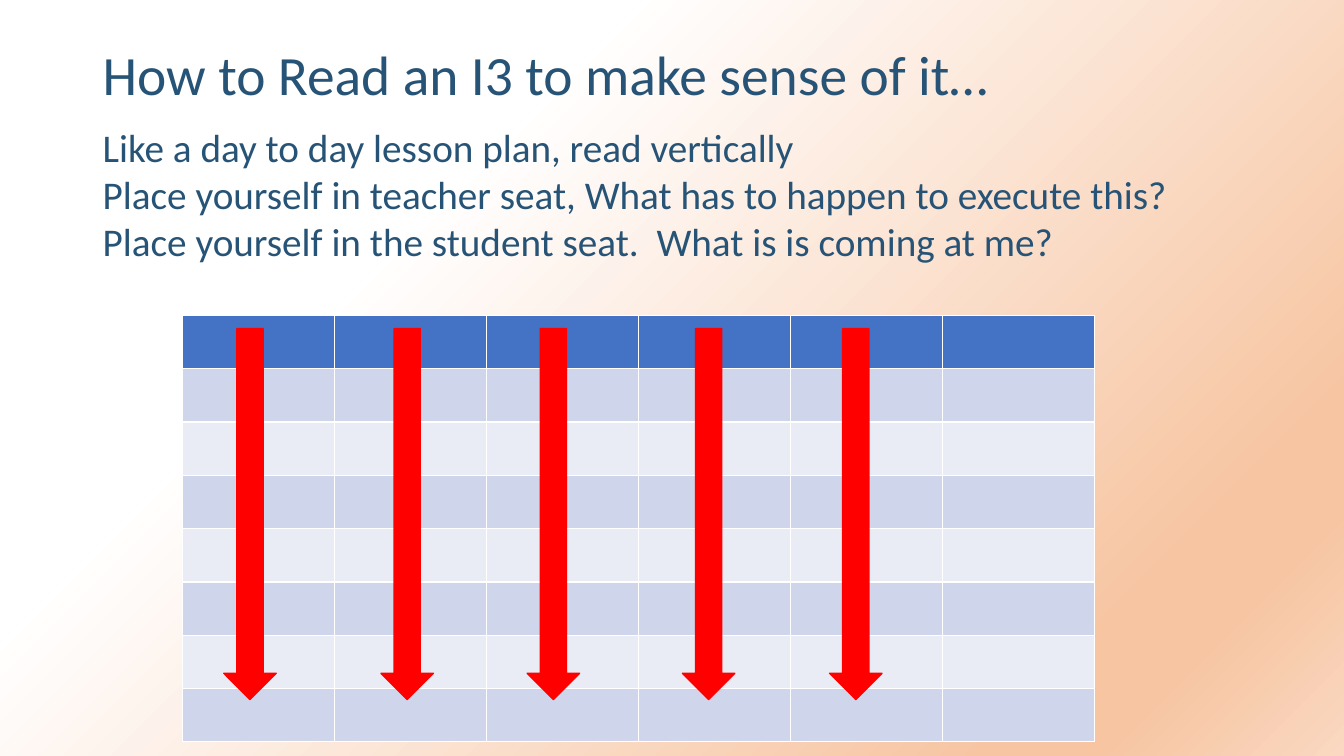
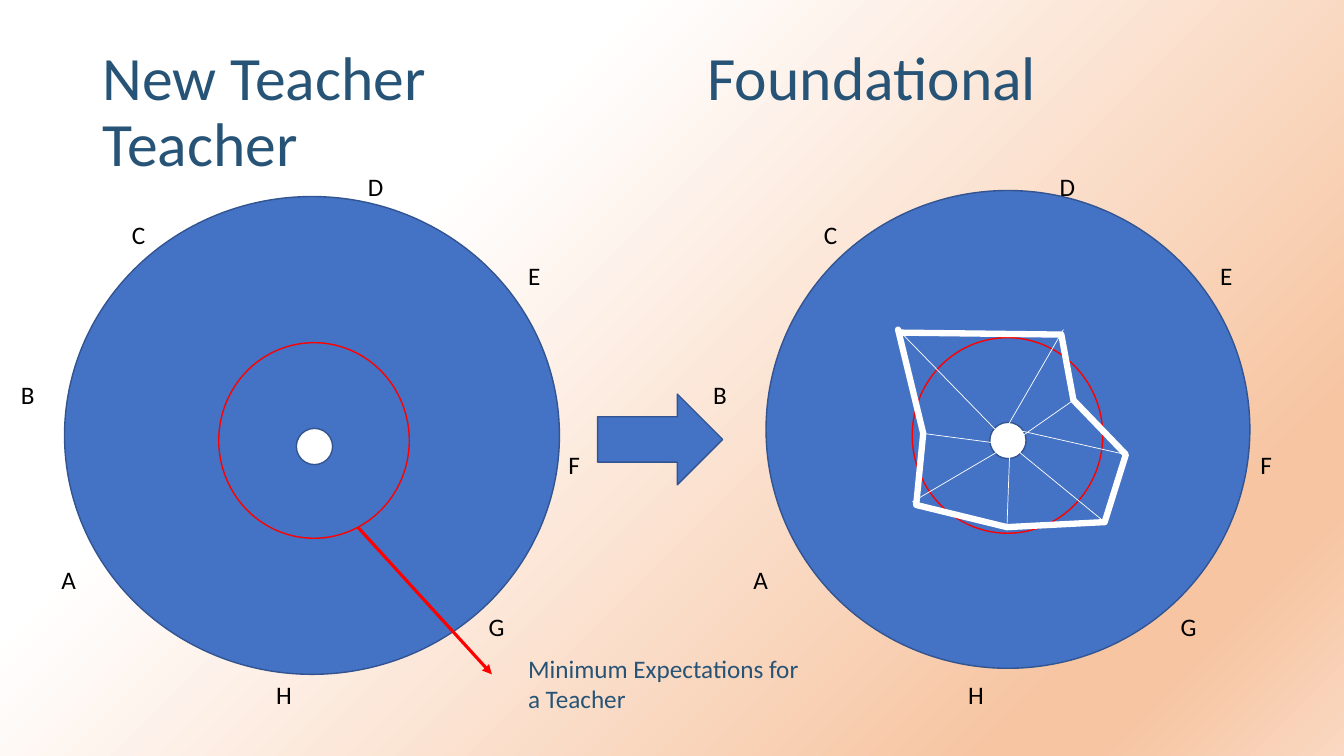
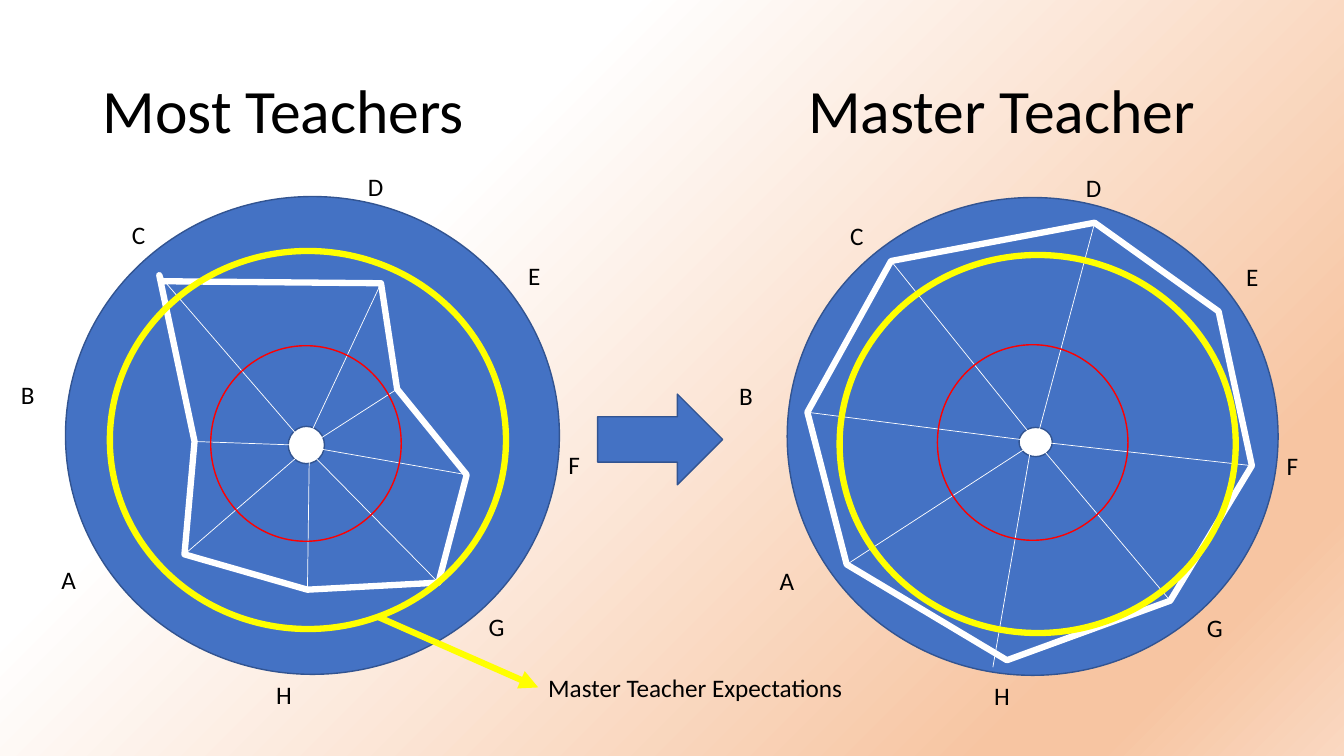
from lxml.etree import SubElement
from pptx import Presentation
from pptx.dml.color import RGBColor
from pptx.enum.shapes import MSO_CONNECTOR, MSO_SHAPE
from pptx.enum.text import MSO_ANCHOR, MSO_AUTO_SIZE
from pptx.oxml.ns import qn
from pptx.util import Pt

EMU_PER_PX = 9144  # 100 px to the inch

NAVY = RGBColor(0x27, 0x54, 0x76)
BLACK = RGBColor(0x00, 0x00, 0x00)
WHITE = RGBColor(0xFF, 0xFF, 0xFF)
RED = RGBColor(0xFF, 0x00, 0x00)
YELLOW = RGBColor(0xFF, 0xFF, 0x00)
BLUE = RGBColor(0x44, 0x72, 0xC4)
BLUE_EDGE = RGBColor(0x32, 0x54, 0x91)
BAND_DARK = RGBColor(0xCF, 0xD5, 0xEA)
BAND_LIGHT = RGBColor(0xE9, 0xEB, 0xF5)
PEACH = RGBColor(0xF7, 0xC5, 0xA2)
PALE_PEACH = RGBColor(0xFA, 0xD8, 0xC1)

BACKDROP = [(30, WHITE), (83, PEACH), (88, PEACH), (100, PALE_PEACH)]
TITLE_FRAME = {"vertical_anchor": MSO_ANCHOR.MIDDLE, "word_wrap": True}
TEXT_FRAME = {"auto_size": MSO_AUTO_SIZE.SHAPE_TO_FIT_TEXT, "word_wrap": True}

LABEL_SPOTS = {"A": (51, 555), "B": (11, 371), "C": (121, 213), "D": (355, 165),
               "E": (514, 253), "F": (554, 441), "G": (475, 602), "H": (264, 669)}


def px(*lengths):
    return [round(length * EMU_PER_PX) for length in lengths]


def set_all(target, values):
    for name, value in values.items():
        setattr(target, name, value)


class Deck:
    def __init__(self):
        self.presentation = Presentation()
        width, height = px(1333.33, 750)
        set_all(self.presentation, {"slide_width": width, "slide_height": height})
        self.slide = None

    @property
    def shapes(self):
        return self.slide.shapes

    def new_slide(self):
        self.slide = self.presentation.slides.add_slide(self.presentation.slide_layouts[6])
        fill = self.slide.background.fill
        fill.gradient()
        fill.gradient_angle = 315
        stops = self.slide.element.find(".//" + qn("a:gsLst"))
        for stop in list(stops):
            stops.remove(stop)
        for percent, color in BACKDROP:
            stop = SubElement(stops, qn("a:gs"), pos=str(percent * 1000))
            SubElement(stop, qn("a:srgbClr"), val=str(color))

    def text(self, box, lines, size=18, color=BLACK, frame_format=TEXT_FRAME, **paragraph_format):
        text_box = self.shapes.add_textbox(*px(*box))
        frame = text_box.text_frame
        set_all(frame, frame_format)
        frame.text = lines
        for paragraph in frame.paragraphs:
            set_all(paragraph, paragraph_format)
            for run in paragraph.runs:
                set_all(run.font, {"name": "Calibri", "size": Pt(size)})
                run.font.color.rgb = color
        return text_box

    def title(self, words, size=44, color=NAVY, height=145, tab=None):
        """Write the slide title; tab is where its second part starts."""
        title = self.text((92, 40, 1150, height), words, size, color, TITLE_FRAME, line_spacing=0.9)
        if tab:
            properties = title.text_frame.paragraphs[0]._p.get_or_add_pPr()
            stops = SubElement(properties, qn("a:tabLst"))
            SubElement(stops, qn("a:tab"), pos=str(px(tab)[0]), algn="l")

    def paint(self, shape, fill, line, weight):
        shape.shadow.inherit = False
        if fill is None:
            shape.fill.background()
        else:
            shape.fill.solid()
            shape.fill.fore_color.rgb = fill
        shape.line.color.rgb = line
        shape.line.width = Pt(weight)

    def shape(self, kind, box, fill=BLUE, line=BLUE_EDGE, weight=1):
        self.paint(self.shapes.add_shape(kind, *px(*box)), fill, line, weight)

    def disc(self, box):
        self.shape(MSO_SHAPE.OVAL, box)

    def hub(self, box):
        self.shape(MSO_SHAPE.OVAL, box, WHITE)

    def ring(self, box, color, weight=1):
        self.shape(MSO_SHAPE.OVAL, box, None, color, weight)

    def next_arrow(self):
        self.shape(MSO_SHAPE.RIGHT_ARROW, (593, 391, 124, 90))

    def labels(self, right=0, down=0):
        for letter, (left, top) in LABEL_SPOTS.items():
            self.text((left + right, top + down, 39, 40), letter)

    def web(self, corners, fill=None):
        builder = self.shapes.build_freeform(*corners[0], scale=EMU_PER_PX)
        builder.add_line_segments(corners[1:], close=True)
        self.paint(builder.convert_to_shape(), fill, WHITE, 4.5)

    def line(self, ends, color=WHITE, weight=0.5, arrow=False):
        line = self.shapes.add_connector(MSO_CONNECTOR.STRAIGHT, *px(*ends))
        line.line.color.rgb = color
        line.line.width = Pt(weight)
        if arrow:
            SubElement(line.line._get_or_add_ln(), qn("a:tailEnd"), type="triangle")
        SubElement(line._element.spPr, qn("a:effectLst"))
        return line

    def spokes(self, *all_ends):
        for ends in all_ends:
            self.line(ends)

    def banded_table(self, box, rows, columns):
        table = self.shapes.add_table(rows, columns, *px(*box)).table
        for index, row in enumerate(table.rows):
            band = BAND_DARK if index % 2 else BAND_LIGHT
            for cell in row.cells:
                cell.fill.solid()
                cell.fill.fore_color.rgb = band if index else BLUE


def reading_slide(deck):
    deck.new_slide()
    deck.title("How to Read an I3 to make sense of it…", 39.6, height=73)
    deck.banded_table((181, 313, 905, 423), 8, 6)
    for left in (222, 378, 523, 677, 823):
        deck.shape(MSO_SHAPE.DOWN_ARROW, (left, 326, 52, 368), RED, RED)
    deck.text((92, 117, 1115, 151),
              "Like a day to day lesson plan, read vertically\n"
              "Place yourself in teacher seat, What has to happen to execute this?\n"
              "Place yourself in the student seat.  What is is coming at me?", 28, NAVY)


def new_teacher_slide(deck):
    deck.new_slide()
    deck.title("New Teacher\tFoundational Teacher", tab=600)
    deck.disc((64, 195, 491, 474))
    deck.labels()
    deck.disc((760, 189, 480, 474))
    deck.labels(right=686.5)
    deck.ring((905, 335, 189, 194), RED)
    deck.ring((217, 340, 189, 194), RED)
    deck.hub((294, 425, 36, 36))
    deck.hub((982, 419, 36, 36))
    deck.web([(891, 327), (916, 430), (909, 501), (999, 523), (1096, 518),
              (1117, 451), (1065, 397), (1053, 332), (892, 330)])
    deck.next_arrow()
    deck.spokes((1002, 441, 891, 327), (1055, 327, 989, 441), (1065, 397, 1002, 441),
                (1117, 451, 1002, 425), (1096, 518, 1002, 441), (999, 523, 1002, 441),
                (905, 498, 1002, 441), (916, 430, 999, 441))
    deck.line((355, 523, 488, 669), RED, 2.25, arrow=True)
    deck.text((514, 643, 293, 71), "Minimum Expectations for a Teacher", color=NAVY)


def master_teacher_slide(deck):
    deck.new_slide()
    deck.title("Most Teachers\tMaster Teacher", color=BLACK, tab=700)
    deck.disc((65, 195, 490, 474))
    deck.labels()
    deck.disc((781, 196, 487, 474))
    deck.labels(right=712.5, down=1)
    deck.web([(884, 259), (801, 409), (840, 560), (999, 655), (1161, 596),
              (1242, 462), (1209, 309), (1086, 221)], BLUE)
    deck.hub((1011, 424, 33, 29))
    deck.spokes((1086, 221, 1028, 438), (884, 259, 1028, 438), (801, 409, 1028, 438),
                (840, 560, 1028, 438), (985, 662, 1025, 431), (1161, 596, 1028, 438),
                (1242, 462, 1028, 438))
    deck.web([(158, 273), (193, 438), (183, 550), (305, 585), (435, 578),
              (463, 471), (394, 386), (378, 281), (160, 279)], BLUE)
    deck.hub((286, 423, 36, 37))
    deck.spokes((158, 273, 303, 441), (378, 281, 303, 441), (394, 386, 307, 442),
                (193, 438, 307, 442), (183, 550, 308, 442), (305, 585, 307, 442),
                (435, 578, 304, 445), (463, 471, 304, 443))
    deck.ring((209, 343, 189, 194), RED)
    deck.ring((930, 342, 189, 194), RED)
    deck.next_arrow()
    deck.ring((833, 253, 393, 375), YELLOW, 4.5)
    deck.ring((109, 249, 393, 375), YELLOW, 4.5)
    pointer = deck.line((375, 612, 534, 682), YELLOW, 4.5, arrow=True)
    caption = deck.text((534, 662, 331, 40), "Master Teacher Expectations")
    pointer.end_connect(caption, 1)


def main():
    deck = Deck()
    reading_slide(deck)
    new_teacher_slide(deck)
    master_teacher_slide(deck)
    deck.presentation.save("out.pptx")


if __name__ == "__main__":
    main()
